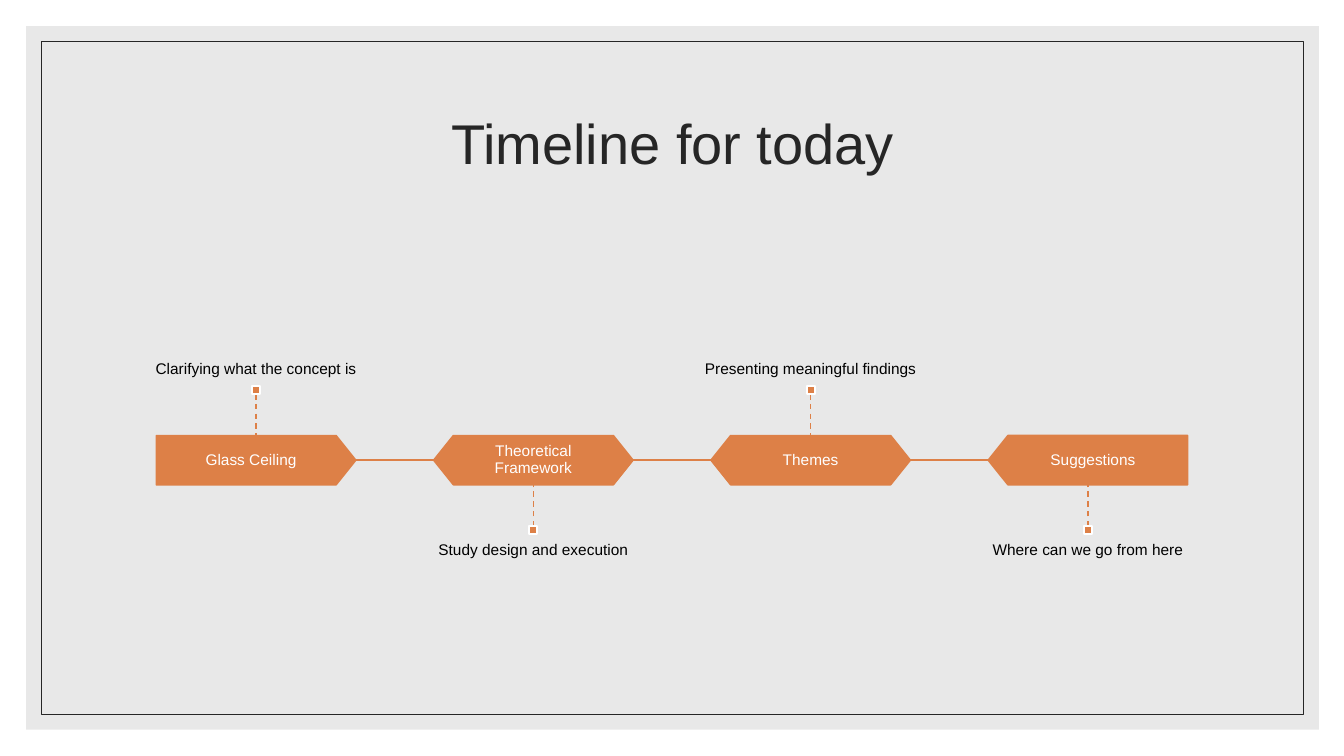
"""Builds the "Timeline for today" slide: four linked steps with callouts."""
from lxml import etree
from pptx import Presentation
from pptx.dml.color import RGBColor
from pptx.enum.dml import MSO_LINE
from pptx.enum.shapes import MSO_CONNECTOR, MSO_SHAPE
from pptx.enum.text import MSO_ANCHOR, PP_ALIGN
from pptx.oxml.ns import qn
from pptx.util import Inches, Pt

RECT, PLATE, HEXAGON = MSO_SHAPE.RECTANGLE, MSO_SHAPE.PENTAGON, MSO_SHAPE.HEXAGON
STRAIGHT, DASH = MSO_CONNECTOR.STRAIGHT, MSO_LINE.DASH
TOP, MIDDLE, BOTTOM = MSO_ANCHOR.TOP, MSO_ANCHOR.MIDDLE, MSO_ANCHOR.BOTTOM
CENTER = PP_ALIGN.CENTER

FONT = "Arial"
ORANGE, WHITE, BLACK, DARK, GRAY = "DD8047", "FFFFFF", "000000", "262626", "D9D9D9"
LEFT, PITCH = 1.55, 2.75
STEP_TOP, STEP_W, STEP_H = 4.32, 1.98, 0.49
MARK, STEM = 0.08, 0.41
NOTE_H = 1.3

# kind, rotation, label offset, label width, label inset from top, label, note
STEPS = [
    (PLATE, 0, 0, 1.88, 0, "Glass Ceiling", "Clarifying what the concept is"),
    (HEXAGON, 0, 0.23, 1.52, 0.06, "Theoretical Framework", "Study design and execution"),
    (HEXAGON, 0, 0.23, 1.52, 0.06, "Themes", "Presenting meaningful findings"),
    (PLATE, 180, 0.1, 1.88, 0, "Suggestions", "Where can we go from here"),
]


def rgb(color):
    """Turn a hex string into a colour."""
    return RGBColor.from_string(color)


def add_box(s, kind, x, y, w, h, fill=None, line=None, width=1):
    """Add a preset shape with optional fill and outline."""
    sp = s.shapes.add_shape(kind, Inches(x), Inches(y), Inches(w), Inches(h))
    sp.shadow.inherit = False
    if fill:
        sp.fill.solid()
        sp.fill.fore_color.rgb = rgb(fill)
    else:
        sp.fill.background()
    if line:
        sp.line.color.rgb = rgb(line)
        sp.line.width = Pt(width)
    else:
        sp.line.fill.background()
    return sp


def set_alpha(sp, percent):
    """Make a solid fill partly transparent."""
    color = sp.fill._xPr.find(qn("a:solidFill"))[0]
    etree.SubElement(color, qn("a:alpha")).set("val", str(percent * 1000))


def add_text(s, text, x, y, w, h, size, color, anchor, inset_x, inset_y):
    """Add a centred, wrapping text box."""
    sp = s.shapes.add_textbox(Inches(x), Inches(y), Inches(w), Inches(h))
    tf = sp.text_frame
    tf.word_wrap = True
    tf.vertical_anchor = anchor
    tf.margin_left = tf.margin_right = Inches(inset_x)
    tf.margin_top = tf.margin_bottom = Inches(inset_y)
    tf.text = text
    p = tf.paragraphs[0]
    p.alignment = CENTER
    p.line_spacing = 0.9
    r = p.runs[0]
    r.font.name = FONT
    r.font.size = Pt(size)
    r.font.color.rgb = rgb(color)


def add_line(s, x1, y1, x2, y2, dash=None):
    """Add a straight orange connector."""
    cx = s.shapes.add_connector(STRAIGHT, Inches(x1), Inches(y1), Inches(x2), Inches(y2))
    cx.line.color.rgb = rgb(ORANGE)
    cx.line.width = Pt(1)
    if dash:
        cx.line.dash_style = dash
    etree.SubElement(cx._element.spPr, qn("a:effectLst"))
    return cx


def add_callout(s, note, center, above):
    """Add a note with its marker and dashed stem above or below a step."""
    if above:
        edge, site, anchor = STEP_TOP, 2, BOTTOM
        mark_y = edge - STEM - MARK
        note_y = mark_y - NOTE_H
    else:
        edge, site, anchor = STEP_TOP + STEP_H, 0, TOP
        mark_y = edge + STEM
        note_y = mark_y + MARK
    add_text(s, note, center - PITCH / 2, note_y, PITCH, NOTE_H, 11, BLACK, anchor, 0, 0.11)
    stem = add_line(s, center, mark_y, center, edge, DASH)
    mark = add_box(s, RECT, center - MARK / 2, mark_y, MARK, MARK, ORANGE, WHITE, 1.5)
    stem.begin_connect(mark, site)


def add_step(s, i, kind, rotation, offset, label_w, inset, label, note):
    """Add one step of the timeline and the link to the next."""
    x = LEFT + i * PITCH
    sp = add_box(s, kind, x, STEP_TOP, STEP_W, STEP_H, ORANGE, ORANGE)
    sp.adjustments[0] = 0.4
    sp.rotation = rotation
    add_text(s, label, x + offset, STEP_TOP + inset, label_w, STEP_H - 2 * inset,
             11, WHITE, MIDDLE, 0.09, 0.09)
    if i < len(STEPS) - 1:
        y = STEP_TOP + STEP_H / 2
        add_line(s, x + STEP_W, y, x + PITCH, y)
    add_callout(s, note, x + STEP_W / 2, above=i % 2 == 0)


def main():
    """Build and save the slide."""
    prs = Presentation()
    prs.slide_width, prs.slide_height = Inches(13.33), Inches(7.5)
    s = prs.slides.add_slide(prs.slide_layouts[6])
    add_box(s, RECT, 0, 0, 13.33, 7.5, WHITE)
    panel = add_box(s, RECT, 0.26, 0.26, 12.82, 6.98, GRAY)
    set_alpha(panel, 60)
    add_box(s, RECT, 0.41, 0.41, 12.52, 6.68, line=DARK, width=0.5)
    add_text(s, "Timeline for today", 1.17, 0.7, 11, 1.5, 40, DARK, MIDDLE, 0.1, 0.05)
    for i, step in enumerate(STEPS):
        add_step(s, i, *step)
    prs.save("out.pptx")


if __name__ == "__main__":
    main()
